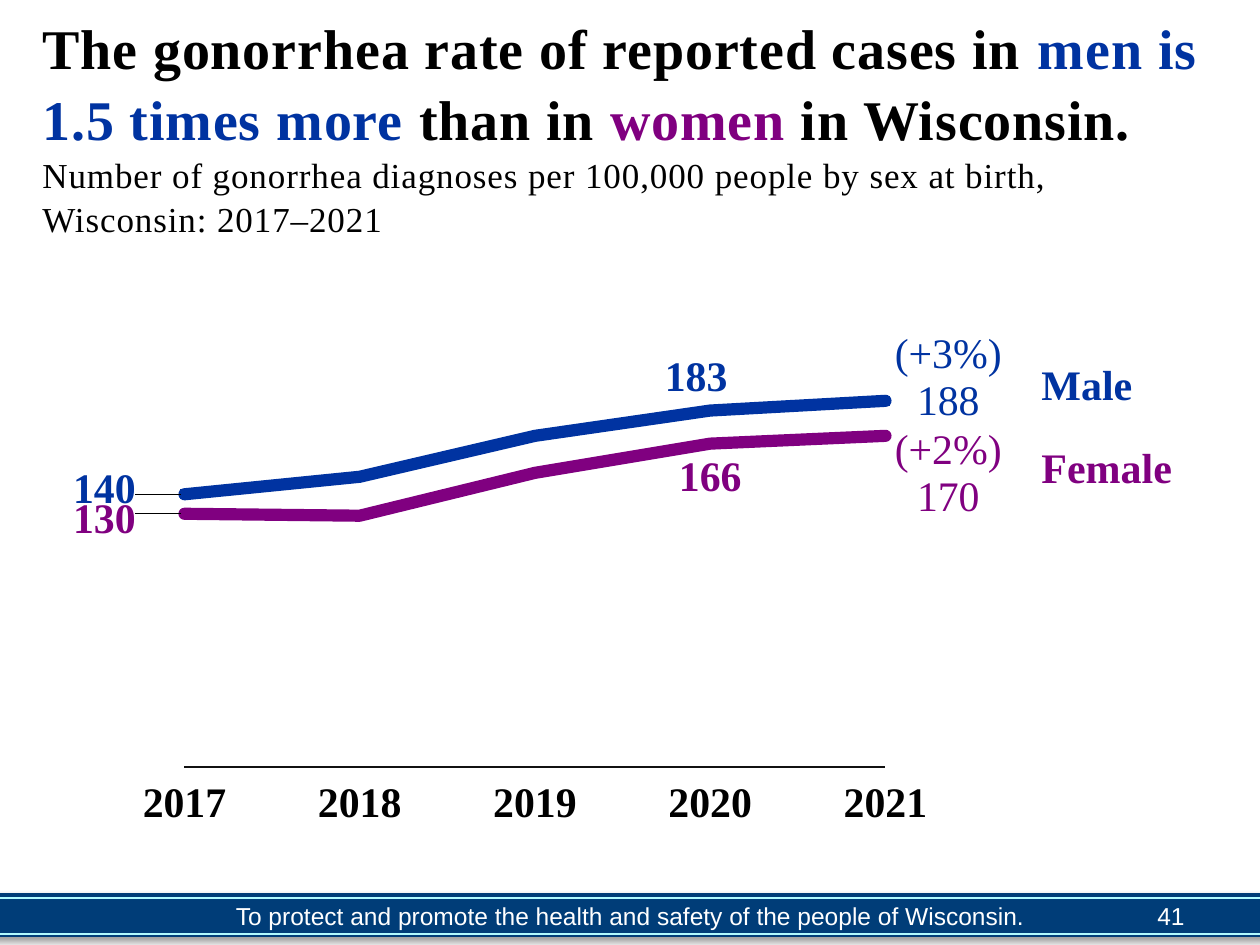
from dataclasses import dataclass

from lxml.etree import SubElement
from pptx import Presentation
from pptx.chart.data import CategoryChartData
from pptx.dml.color import RGBColor
from pptx.enum.chart import XL_CHART_TYPE, XL_LABEL_POSITION, XL_TICK_LABEL_POSITION, XL_TICK_MARK
from pptx.enum.shapes import MSO_CONNECTOR, MSO_SHAPE
from pptx.enum.text import MSO_ANCHOR, PP_ALIGN
from pptx.oxml import parse_xml
from pptx.oxml.ns import nsdecls, qn
from pptx.util import Pt

EMU_PER_PX = 914400 / 126
BLACK = RGBColor(0x00, 0x00, 0x00)
WHITE = RGBColor(0xFF, 0xFF, 0xFF)
AXIS_GREY = RGBColor(0x11, 0x11, 0x11)
BLUE = RGBColor(0x00, 0x33, 0xA1)
PURPLE = RGBColor(0x80, 0x00, 0x80)
NAVY = RGBColor(0x00, 0x3D, 0x78)
CYAN = RGBColor(0xB0, 0xFA, 0xFF)
SERIF = "Times New Roman"
SANS = "Arial"
CHART_WIDTH, CHART_HEIGHT = 945, 525
YEARS = ["2017", "2018", "2019", "2020", "2021"]


@dataclass
class Span:
    text: str
    color: RGBColor
    size: int
    font: str = SERIF
    bold: bool = False
    spacing: int = 0


@dataclass
class Label:
    point: int
    position: XL_LABEL_POSITION
    shift: tuple[int, int]
    lines: tuple[str, ...] = ()


@dataclass
class RateLine:
    name: str
    values: list[int]
    color: RGBColor
    labels: list[Label]


POSITION = XL_LABEL_POSITION
RATES = [
    RateLine("Series 1", [140, 149, 170, 183, 188], BLUE, [
        Label(0, POSITION.LEFT, (-40, -5)),
        Label(3, POSITION.ABOVE, (-14, 0)),
        Label(4, POSITION.RIGHT, (0, -23), ("(+3%)", "188")),
    ]),
    RateLine("Series 2", [130, 129, 151, 166, 170], PURPLE, [
        Label(0, POSITION.LEFT, (-40, 5)),
        Label(3, POSITION.BELOW, (0, 0)),
        Label(4, POSITION.RIGHT, (0, 38), ("(+2%)", "170")),
    ]),
]


def px(length: int) -> int:
    return round(length * EMU_PER_PX)


def style_font(font, color: RGBColor, size: int, name: str = SERIF, bold: bool = True) -> None:
    for key, value in {"size": Pt(size), "name": name, "bold": bold}.items():
        setattr(font, key, value)
    font.color.rgb = color


def add_spans(para, spans: list[Span]) -> None:
    for span in spans:
        run = para.add_run()
        run.text = span.text
        style_font(run.font, span.color, span.size, span.font, span.bold)
        if span.spacing:
            run.font._element.set("spc", str(span.spacing))


def add_text(page, area: tuple[int, int, int, int], spans: list[Span],
             align=PP_ALIGN.LEFT, anchor=MSO_ANCHOR.MIDDLE, wrap: bool = True):
    frame = page.shapes.add_textbox(*map(px, area)).text_frame
    for key, value in {"word_wrap": wrap, "vertical_anchor": anchor}.items():
        setattr(frame, key, value)
    para = frame.paragraphs[0]
    para.alignment = align
    add_spans(para, spans)
    return para


def add_footer(page) -> None:
    band = page.shapes.add_shape(MSO_SHAPE.RECTANGLE, px(-13), px(893), px(1285), px(44))
    band.fill.solid()
    band.fill.fore_color.rgb = NAVY
    band.line.fill.background()
    band._element.spPr.append(parse_xml(
        f'<a:effectLst {nsdecls("a")}><a:outerShdw blurRad="50800" dist="38100" dir="2700000">'
        '<a:srgbClr val="000000"><a:alpha val="40000"/></a:srgbClr></a:outerShdw></a:effectLst>'))
    add_text(page, (-10, 903, 1281, 25),
             [Span("To protect and promote the health and safety of the people of Wisconsin.", WHITE, 14, SANS)],
             align=PP_ALIGN.CENTER)
    for y in (898, 934):
        stripe = page.shapes.add_connector(MSO_CONNECTOR.STRAIGHT, px(-13), px(y), px(1273), px(y))
        stripe.line.color.rgb = CYAN
        stripe.line.width = Pt(1.5)
        SubElement(stripe._element.spPr, qn("a:effectLst"))
    add_text(page, (903, 891, 294, 50), [Span("41", WHITE, 14, SANS)], align=PP_ALIGN.RIGHT)


def add_title(page) -> None:
    headline = [
        ("The gonorrhea rate of reported cases in ", BLACK),
        ("men is 1.5 times more ", BLUE),
        ("than in ", BLACK),
        ("women", PURPLE),
        (" in Wisconsin.", BLACK),
    ]
    para = add_text(page, (30, 3, 1198, 244),
                    [Span(text, color, 32, bold=True, spacing=50) for text, color in headline])
    para.line_spacing = 1.05
    para.add_line_break()
    add_spans(para, [Span("Number of gonorrhea diagnoses per 100,000 people by sex at birth, "
                          "Wisconsin: 2017–2021", BLACK, 20, spacing=50)])


def manual_layout(**settings):
    parts = "".join(f'<c:{key} val="{value}"/>' for key, value in settings.items())
    return parse_xml(f'<c:layout {nsdecls("c")}><c:manualLayout>{parts}</c:manualLayout></c:layout>')


def add_label(series, label: Label, color: RGBColor) -> None:
    data_label = series.points[label.point].data_label
    if label.lines:
        frame = data_label.text_frame
        for index, line in enumerate(label.lines):
            para = frame.paragraphs[0] if index == 0 else frame.add_paragraph()
            add_spans(para, [Span(line, color, 24)])
    else:
        style_font(data_label.font, color, 24)
    data_label.position = label.position
    x, y = label.shift
    index_tag = series._element.xpath(f'c:dLbls/c:dLbl/c:idx[@val="{label.point}"]')[0]
    index_tag.addnext(manual_layout(x=round(x / CHART_WIDTH, 3), y=round(y / CHART_HEIGHT, 3)))


def style_series(series, rate: RateLine) -> None:
    series.smooth = False
    series.marker.style = None
    series.format.line.color.rgb = rate.color
    series.format.line.width = Pt(7)
    series._element.xpath("c:spPr/a:ln")[0].set("cap", "rnd")
    series.data_labels.show_value = False
    for label in rate.labels:
        add_label(series, label, rate.color)


def add_rate_chart(page) -> None:
    data = CategoryChartData()
    data.categories = YEARS
    for rate in RATES:
        data.add_series(rate.name, rate.values)
    chart = page.shapes.add_chart(XL_CHART_TYPE.LINE, px(73), px(325),
                                  px(CHART_WIDTH), px(CHART_HEIGHT), data).chart
    chart.has_legend = False
    chart.has_title = False
    style_font(chart.font, BLACK, 24)
    years = chart.category_axis
    for key, value in {"major_tick_mark": XL_TICK_MARK.NONE, "minor_tick_mark": XL_TICK_MARK.NONE,
                       "tick_label_position": XL_TICK_LABEL_POSITION.LOW,
                       "has_major_gridlines": False}.items():
        setattr(years, key, value)
    style_font(years.tick_labels.font, BLACK, 24)
    years.format.line.color.rgb = AXIS_GREY
    years.format.line.width = Pt(0.75)
    scale = chart.value_axis
    for key, value in {"minimum_scale": 0, "maximum_scale": 200,
                       "has_major_gridlines": False, "visible": False}.items():
        setattr(scale, key, value)
    for old in scale._element.findall(qn("c:crossBetween")):
        scale._element.remove(old)
    scale._element.find(qn("c:crosses")).addnext(
        parse_xml(f'<c:crossBetween {nsdecls("c")} val="midCat"/>'))
    plot_area = chart._chartSpace.chart.plotArea
    for old in plot_area.findall(qn("c:layout")):
        plot_area.remove(old)
    plot_area.insert(0, manual_layout(layoutTarget="inner", xMode="edge", yMode="edge",
                                      x=0.113, y=0.1, w=0.746, h=0.742))
    chart.plots[0].vary_by_categories = False
    for series, rate in zip(chart.plots[0].series, RATES):
        style_series(series, rate)


def main() -> None:
    deck = Presentation()
    deck.slide_width, deck.slide_height = px(1260), px(945)
    page = deck.slides.add_slide(deck.slide_layouts[6])
    add_footer(page)
    add_title(page)
    for name, color, y, width in (("Female", PURPLE, 435, 158), ("Male", BLUE, 352, 117)):
        add_text(page, (1029, y, width, 63), [Span(name, color, 24, bold=True)],
                 anchor=MSO_ANCHOR.TOP, wrap=False)
    add_rate_chart(page)
    deck.save("out.pptx")


if __name__ == "__main__":
    main()
